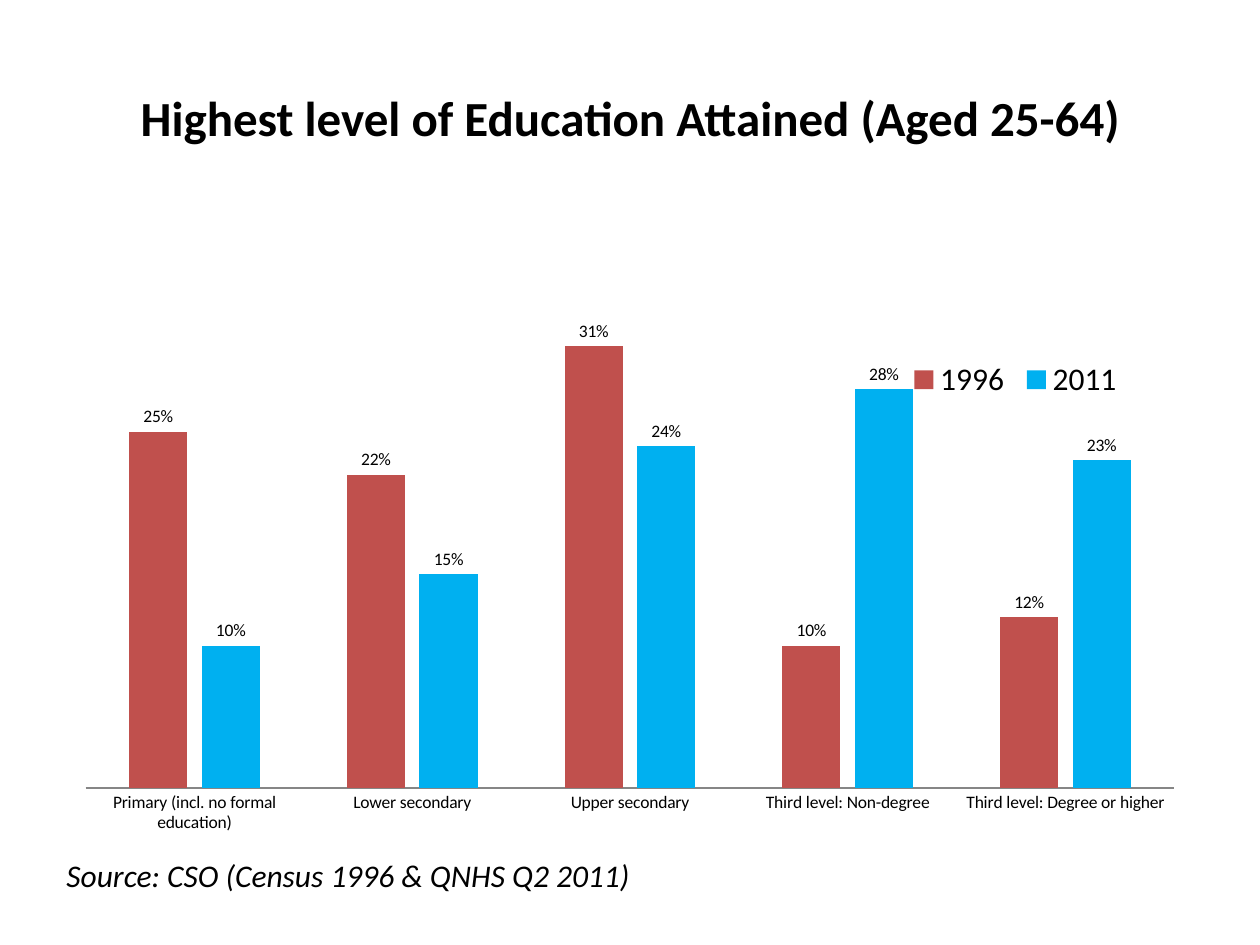
"""Build a slide comparing education attainment in 1996 and 2011."""
from lxml import etree
from pptx import Presentation
from pptx.chart.data import CategoryChartData
from pptx.dml.color import RGBColor
from pptx.enum.chart import XL_CHART_TYPE, XL_LABEL_POSITION, XL_LEGEND_POSITION, XL_TICK_MARK
from pptx.enum.text import MSO_ANCHOR, PP_ALIGN
from pptx.oxml.ns import qn
from pptx.util import Cm, Pt

CLUSTERED = XL_CHART_TYPE.COLUMN_CLUSTERED
OUTSIDE_END = XL_LABEL_POSITION.OUTSIDE_END
LEGEND_TOP = XL_LEGEND_POSITION.TOP
NO_TICK = XL_TICK_MARK.NONE
MIDDLE = MSO_ANCHOR.MIDDLE
CENTER, LEFT = PP_ALIGN.CENTER, PP_ALIGN.LEFT

COLORS = {"text": "000000", "axis": "868686", "1996": "C0504D", "2011": "00B0F0"}
FONT = "Calibri"
LEVELS = [
    "Primary (incl. no formal education)",
    "Lower secondary",
    "Upper secondary",
    "Third level: Non-degree",
    "Third level: Degree or higher",
]
SHARES = {
    "1996": [0.25, 0.22, 0.31, 0.10, 0.12],
    "2011": [0.10, 0.15, 0.24, 0.28, 0.23],
}


def style_font(font, size):
    font.name = FONT
    font.size = Pt(size)
    font.color.rgb = RGBColor.from_string(COLORS["text"])


def place_in_chart(parent, index, settings):
    for old in parent.findall(qn("c:layout")):
        parent.remove(old)
    layout = etree.Element(qn("c:layout"))
    manual = etree.SubElement(layout, qn("c:manualLayout"))
    for tag, value in settings.items():
        etree.SubElement(manual, qn(f"c:{tag}")).set("val", str(value))
    parent.insert(index, layout)


prs = Presentation()
prs.slide_width, prs.slide_height = Cm(25.4), Cm(19.05)
slide = prs.slides.add_slide(prs.slide_layouts[6])

captions = [
    ("Highest level of Education Attained (Aged 25-64)",
     (1.27, 0.76, 22.86, 3.18), 28, CENTER, True, False),
    ("Source: CSO (Census 1996 & QNHS Q2 2011)",
     (1.09, 17.12, 13.21, 1.02), 18, LEFT, False, True),
]
for wording, place, size, align, bold, italic in captions:
    frame = slide.shapes.add_textbox(*map(Cm, place)).text_frame
    frame.word_wrap = True
    frame.vertical_anchor = MIDDLE
    paragraph = frame.paragraphs[0]
    paragraph.text = wording
    paragraph.alignment = align
    style_font(paragraph.font, size)
    paragraph.font.bold, paragraph.font.italic = bold, italic

attainment = CategoryChartData(number_format="0%")
attainment.categories = LEVELS
for year, shares in SHARES.items():
    attainment.add_series(year, shares)
chart = slide.shapes.add_chart(
    CLUSTERED, Cm(1.27), Cm(4.45), Cm(22.86), Cm(12.57), attainment).chart
chart.has_title = False
style_font(chart.font, 10)

level_axis = chart.category_axis
level_axis.major_tick_mark = NO_TICK
level_axis.format.line.color.rgb = RGBColor.from_string(COLORS["axis"])
level_axis.format.line.width = Pt(0.75)
share_axis = chart.value_axis
share_axis.minimum_scale, share_axis.maximum_scale = 0, 0.35
share_axis.has_major_gridlines = False
share_axis.visible = False

bars = chart.plots[0]
bars.gap_width, bars.overlap = 150, -25
bars.vary_by_categories = False
for series in bars.series:
    series.format.fill.solid()
    series.format.fill.fore_color.rgb = RGBColor.from_string(COLORS[series.name])
    labels = series.data_labels
    labels.show_value = True
    labels.number_format, labels.number_format_is_linked = "0%", False
    labels.position = OUTSIDE_END
    style_font(labels.font, 10)

chart.has_legend = True
legend = chart.legend
legend.position = LEGEND_TOP
legend.include_in_layout = False
style_font(legend.font, 18)

edges = {"xMode": "edge", "yMode": "edge"}
plot_area = chart._chartSpace.find(".//" + qn("c:plotArea"))
legend_area = chart._chartSpace.find(".//" + qn("c:legend"))
place_in_chart(plot_area, 0, {"layoutTarget": "inner", **edges,
                              "x": 0.02, "y": 0.11, "w": 0.96, "h": 0.8})
place_in_chart(legend_area, 1, {**edges, "x": 0.74, "y": 0.22, "w": 0.2, "h": 0.07})

prs.save("out.pptx")
